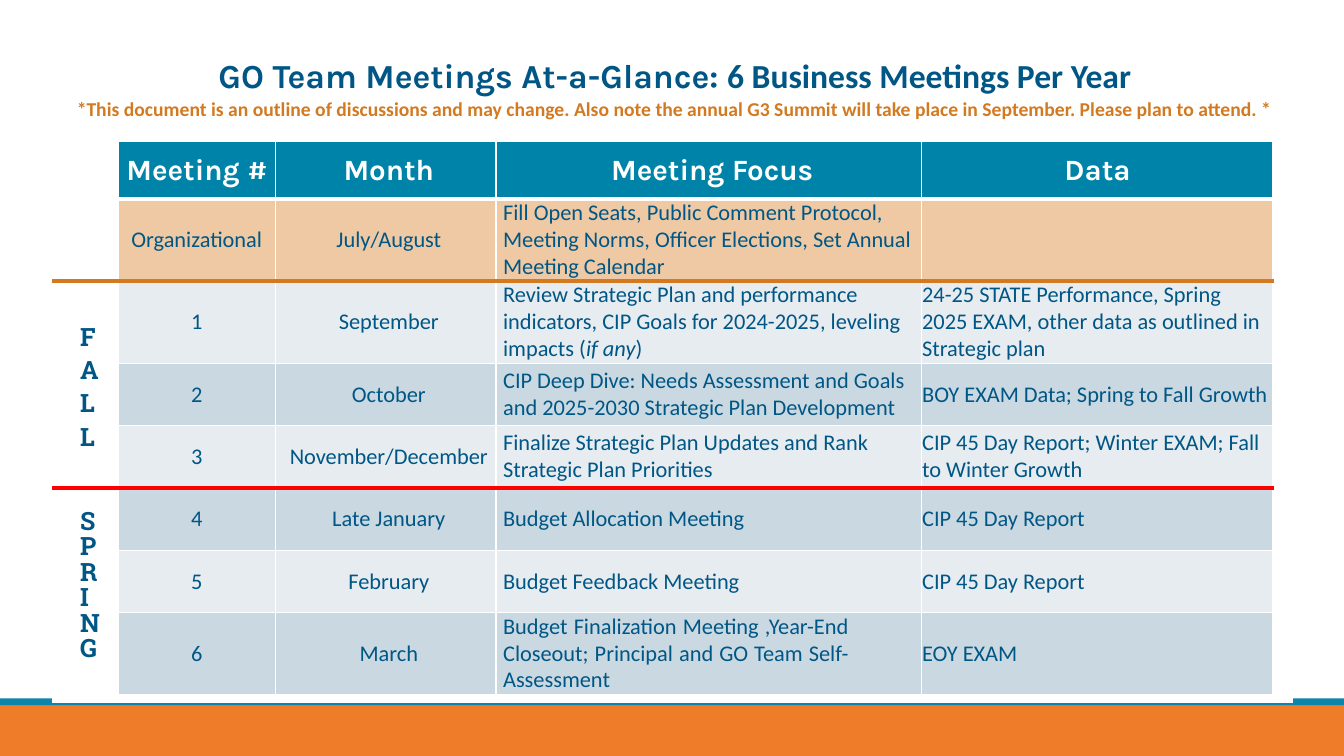
from lxml import etree
from pptx import Presentation
from pptx.dml.color import RGBColor
from pptx.enum.shapes import MSO_SHAPE
from pptx.enum.text import MSO_ANCHOR, PP_ALIGN
from pptx.oxml.ns import qn
from pptx.util import Cm, Pt

RECT = MSO_SHAPE.RECTANGLE
TOP, MIDDLE = MSO_ANCHOR.TOP, MSO_ANCHOR.MIDDLE
LEFT, CENTER, JUSTIFY = PP_ALIGN.LEFT, PP_ALIGN.CENTER, PP_ALIGN.JUSTIFY

# Content
TITLE = ["GO Team Meetings At-a-Glance: ", "6 Business Meetings Per Year"]
NOTE = ("*This document is an outline of discussions and may change. Also note the annual "
        "G3 Summit will take place in September. Please plan to attend. *")
HEADS = ["Meeting #", "Month", "Meeting Focus", "Data"]
MEETINGS = [
    ("Organizational", "July/August",
     "Fill Open Seats, Public Comment Protocol, Meeting Norms, Officer Elections, "
     "Set Annual Meeting Calendar", ""),
    ("1", "September",
     ("Review Strategic Plan and performance indicators, CIP Goals for 2024-2025, "
      "leveling impacts (", "if any", ")"),
     "24-25 STATE Performance, Spring 2025 EXAM, other data as outlined in Strategic plan"),
    ("2", "October",
     "CIP Deep Dive: Needs Assessment and Goals and 2025-2030 Strategic Plan Development",
     "BOY EXAM Data; Spring to Fall Growth"),
    ("3", "November/December",
     "Finalize Strategic Plan Updates and Rank Strategic Plan Priorities",
     "CIP 45 Day Report; Winter EXAM; Fall to Winter Growth"),
    ("4", "Late January", "Budget Allocation Meeting", "CIP 45 Day Report"),
    ("5", "February", "Budget Feedback Meeting", "CIP 45 Day Report"),
    ("6", "March",
     "Budget Finalization Meeting ,Year-End Closeout; Principal and GO Team Self- Assessment",
     "EOY EXAM"),
]

THEME = {
    "navy": "005685", "teal": "0083A9", "band": "0D85AB", "orange": "EE7C29",
    "rust": "D37A21", "red": "FF0000", "white": "FFFFFF", "peach": "EFC9A3",
    "pale": "E7ECF0", "mist": "CAD9E1",
    "head": "Karla", "body": "Calibri", "slab": "Roboto Slab",
    "title": 24, "label": 21, "side": 18, "text": 16, "note": 14,
}

# Layout in centimetres
COLS = [1.65, 3.96, 5.56, 10.72, 8.86, 0.48]
ROWS = [2.24, 1.45, 2.06, 2.08] + [1.57] * 4 + [2.06, 0.2]
ALIGN = [CENTER, CENTER, LEFT, LEFT]
INDENT = [0, 0.16, 0.18, 0.02]
RULES = {2: ("white", 3), 3: ("rust", 3), 6: ("red", 3)}  # line above each row
SPANS = [(0, 0, 0, 5), (1, 0, 2, 0), (3, 0, 5, 0), (6, 0, 9, 0), (1, 5, 9, 5), (9, 2, 9, 3)]


def color(name):
    return RGBColor.from_string(THEME[name])


def assign(item, values):
    for key, value in values.items():
        setattr(item, key, value)


def margins(cell, left=0, top=0, right=0, anchor=MIDDLE):
    assign(cell, {"margin_left": Cm(left), "margin_top": Cm(top), "margin_right": Cm(right),
                  "margin_bottom": 0, "vertical_anchor": anchor})


def write(para, text, face, size, ink, bold=False, italic=False):
    run = para.add_run()
    run.text = text
    assign(run.font, {"name": THEME[face], "size": Pt(THEME[size]),
                      "bold": bold, "italic": italic})
    run.font.color.rgb = color(ink)


def border(cell, side, ink, width):
    props = cell._tc.get_or_add_tcPr()
    line = etree.SubElement(props, qn("a:" + side), w=str(Pt(width)))
    if ink:
        fill = etree.SubElement(line, qn("a:solidFill"))
        etree.SubElement(fill, qn("a:srgbClr"), val=THEME[ink])
    else:
        etree.SubElement(line, qn("a:noFill"))


deck = Presentation()
assign(deck, {"slide_width": Cm(33.87), "slide_height": Cm(19.05)})
slide = deck.slides.add_slide(deck.slide_layouts[6])

# Footer bands
for top, height, ink in [(17.78, 1.27, "orange"), (17.6, 0.18, "band")]:
    bar = slide.shapes.add_shape(RECT, 0, Cm(top), deck.slide_width, Cm(height))
    bar.shadow.inherit = False
    bar.fill.solid()
    bar.fill.fore_color.rgb = color(ink)
    bar.line.fill.background()

# Table grid
table = slide.shapes.add_table(len(ROWS), len(COLS), Cm(1.33), Cm(1.33),
                               Cm(sum(COLS)), Cm(sum(ROWS))).table
assign(table, {"first_row": False, "horz_banding": False})
for col, width in zip(table.columns, COLS):
    col.width = Cm(width)
for row, height in zip(table.rows, ROWS):
    row.height = Cm(height)

# Merges, borders and fills
ends = {}
for top, left, bottom, right in SPANS:
    table.cell(top, left).merge(table.cell(bottom, right))
    ends[top, left] = bottom
for r in range(len(ROWS)):
    for c in range(len(COLS)):
        cell = table.cell(r, c)
        margins(cell)
        last = ends.get((r, c), r)
        plain = (None, 0) if r == 0 else ("white", 1)
        for side, (ink, width) in {"lnL": plain, "lnR": plain,
                                   "lnT": RULES.get(r, plain),
                                   "lnB": RULES.get(last + 1, plain)}.items():
            border(cell, side, ink, width)
        tone = "white"
        if 1 <= c <= 4 and 1 <= r <= 8:
            tone = {1: "teal", 2: "peach"}.get(r, "pale" if r % 2 else "mist")
        cell.fill.solid()
        cell.fill.fore_color.rgb = color(tone)
        # Keep empty cells from stretching their rows
        etree.SubElement(cell.text_frame.paragraphs[0]._p, qn("a:endParaRPr"), sz="100")

# Title and note
cell = table.cell(0, 0)
margins(cell, left=0.12, top=0.1, anchor=TOP)
para = cell.text_frame.paragraphs[0]
for text, face in zip(TITLE, ["head", "body"]):
    write(para, text, face, "title", "navy", bold=True)
para.alignment = CENTER
para = cell.text_frame.add_paragraph()
para.alignment = CENTER
write(para, NOTE, "body", "note", "rust", bold=True)

# Column heads
for c, text in enumerate(HEADS):
    cell = table.cell(1, c + 1)
    margins(cell, INDENT[c])
    para = cell.text_frame.paragraphs[0]
    para.alignment = CENTER
    write(para, text, "head", "label", "white", bold=True)

# Meetings
INSET = {(1, 3): 0.2, (6, 2): 1.83}
for r, meeting in enumerate(MEETINGS):
    for c, text in enumerate(meeting):
        if not text:
            continue
        cell = table.cell(r + 2, c + 1)
        margins(cell, INDENT[c], right=INSET.get((r, c), 0))
        para = cell.text_frame.paragraphs[0]
        assign(para, {"alignment": JUSTIFY if (r, c) == (6, 2) else ALIGN[c],
                      "line_spacing": Pt(19.2)})
        parts = (text,) if isinstance(text, str) else text
        for n, part in enumerate(parts):
            write(para, part, "body", "text", "navy", italic=n == 1)

# Seasons, one letter to a line in a narrow cell
for r, text, top, anchor, space in [(3, "F A L L", 0.1, MIDDLE, 1.0),
                                    (6, "S P R I N G", 0.6, TOP, Pt(18.2))]:
    cell = table.cell(r, 0)
    margins(cell, 0.69, top, 0.25, anchor)
    para = cell.text_frame.paragraphs[0]
    assign(para, {"alignment": LEFT, "line_spacing": space})
    write(para, text, "slab", "side", "navy", bold=True)

deck.save("out.pptx")
